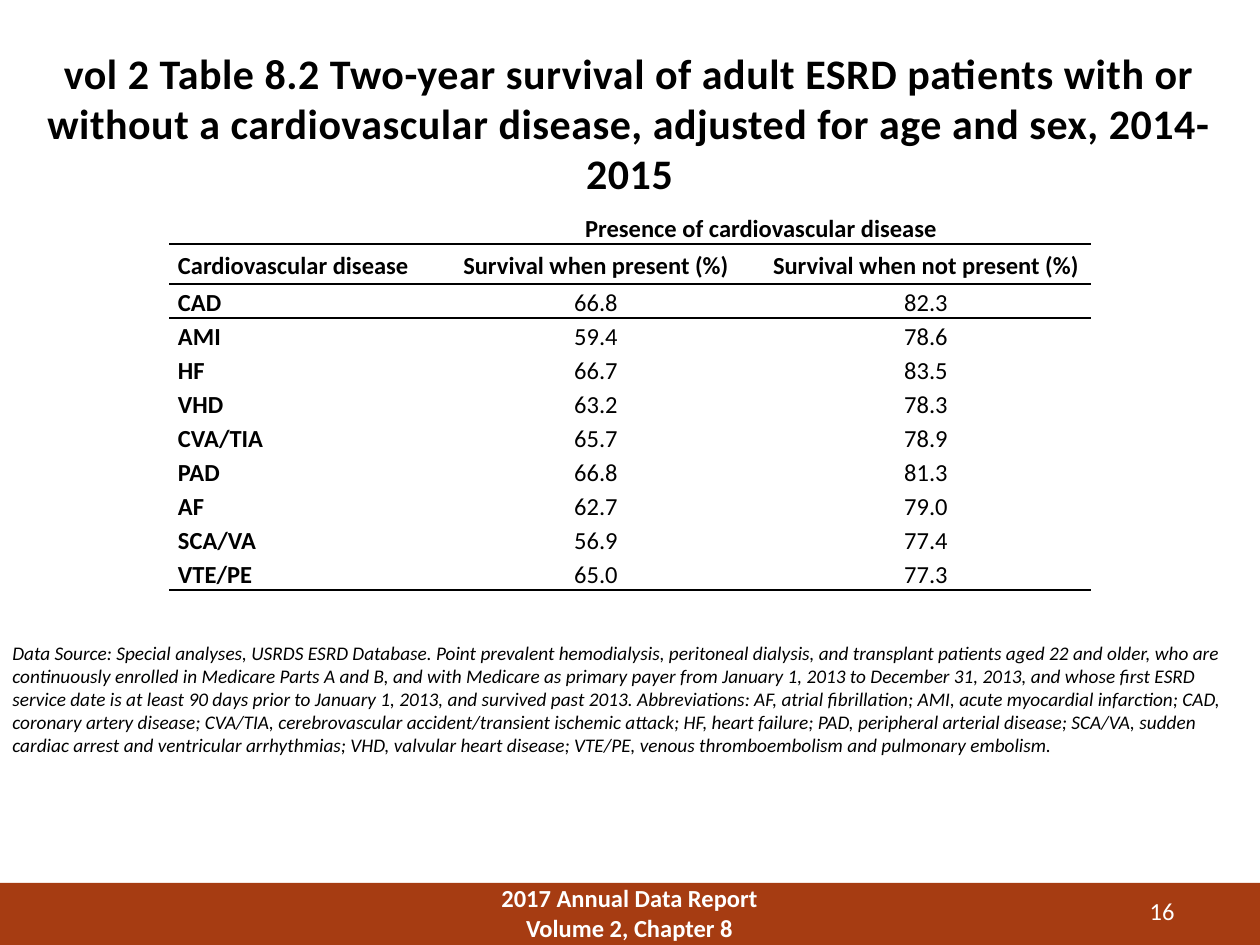
from lxml.etree import SubElement
from pptx import Presentation
from pptx.dml.color import RGBColor
from pptx.enum.shapes import MSO_SHAPE
from pptx.enum.text import MSO_ANCHOR, PP_ALIGN
from pptx.oxml.ns import qn
from pptx.util import Pt

PX = 914400 / 126
COLORS = {"text": "000000", "band": "A63C12", "footer": "FFFFFF"}
FONT = "Calibri"
NO_STYLE = "{2D5ABB26-0587-4C30-8999-92F81FD0307C}"
COLUMN_WIDTHS = [262, 330, 330]
HEADER_HEIGHTS = [34, 40]
ROW_HEIGHT = 34
HEADERS = ["Cardiovascular disease", "Survival when present (%)", "Survival when not present (%)"]
SURVIVAL = [
    ("CAD", "66.8", "82.3"),
    ("AMI", "59.4", "78.6"),
    ("HF", "66.7", "83.5"),
    ("VHD", "63.2", "78.3"),
    ("CVA/TIA", "65.7", "78.9"),
    ("PAD", "66.8", "81.3"),
    ("AF", "62.7", "79.0"),
    ("SCA/VA", "56.9", "77.4"),
    ("VTE/PE", "65.0", "77.3"),
]
TITLE = ("vol 2 Table 8.2 Two-year survival of adult ESRD patients with or without "
         "a cardiovascular disease, adjusted for age and sex, 2014-2015")
NOTE = (
    "Data Source: Special analyses, USRDS ESRD Database. Point prevalent hemodialysis, "
    "peritoneal dialysis, and transplant patients aged 22 and older, who are continuously "
    "enrolled in Medicare Parts A and B, and with Medicare as primary payer from January 1, "
    "2013 to December 31, 2013, and whose first ESRD service date is at least 90 days prior "
    "to January 1, 2013, and survived past 2013. Abbreviations: AF, atrial fibrillation; AMI, "
    "acute myocardial infarction; CAD, coronary artery disease; CVA/TIA, cerebrovascular "
    "accident/transient ischemic attack; HF, heart failure; PAD, peripheral arterial disease; "
    "SCA/VA, sudden cardiac arrest and ventricular arrhythmias; VHD, valvular heart disease; "
    "VTE/PE, venous thromboembolism and pulmonary embolism."
)


def px(value):
    return round(value * PX)


def rgb(name):
    return RGBColor.from_string(COLORS[name])


def set_attributes(target, **values):
    for name, value in values.items():
        setattr(target, name, value)


def write_paragraph(paragraph, text, size, color="text", align=PP_ALIGN.LEFT, **style):
    paragraph.alignment = align
    run = paragraph.add_run()
    run.text = text
    set_attributes(run.font, name=FONT, size=Pt(size), **style)
    run.font.color.rgb = rgb(color)
    return run


def add_text(slide, box, lines, size, anchor=MSO_ANCHOR.TOP, spacing=0, **style):
    frame = slide.shapes.add_textbox(*map(px, box)).text_frame
    set_attributes(frame, word_wrap=True, vertical_anchor=anchor)
    for index, line in enumerate(lines):
        paragraph = frame.add_paragraph() if index else frame.paragraphs[0]
        run = write_paragraph(paragraph, line, size, **style)
        if spacing:
            run.font._element.set("spc", str(spacing))


def add_band(slide, box):
    shape = slide.shapes.add_shape(MSO_SHAPE.RECTANGLE, *map(px, box))
    shape.shadow.inherit = False
    shape.fill.solid()
    shape.fill.fore_color.rgb = rgb("band")
    shape.line.fill.background()


def add_border(cell, side):
    line = SubElement(cell._tc.get_or_add_tcPr(), qn(f"a:{side}"), w=str(Pt(1)))
    fill = SubElement(line, qn("a:solidFill"))
    SubElement(fill, qn("a:srgbClr"), val=COLORS["text"])


def format_cell(cell, text, align, bold, borders):
    set_attributes(cell, margin_left=px(9), margin_right=px(9), margin_top=0,
                   margin_bottom=0, vertical_anchor=MSO_ANCHOR.MIDDLE)
    for side in borders:
        add_border(cell, side)
    cell.fill.background()
    paragraph = cell.text_frame.paragraphs[0]
    paragraph.line_spacing = 1.15
    if text:
        write_paragraph(paragraph, text, 14, align=align, bold=bold)
    else:
        SubElement(paragraph._p, qn("a:endParaRPr"), sz="1400")


def add_survival_table(slide, left, top):
    rows = [("", "Presence of cardiovascular disease", ""), HEADERS, *SURVIVAL]
    heights = HEADER_HEIGHTS + [ROW_HEIGHT] * len(SURVIVAL)
    box = (left, top, sum(COLUMN_WIDTHS), sum(heights))
    table = slide.shapes.add_table(len(rows), len(COLUMN_WIDTHS), *map(px, box)).table
    set_attributes(table, first_row=False, horz_banding=False)
    table._tbl.tblPr.find(qn("a:tableStyleId")).text = NO_STYLE
    for column, width in zip(table.columns, COLUMN_WIDTHS):
        column.width = px(width)
    for row, height in zip(table.rows, heights):
        row.height = px(height)
    borders = {0: ["lnB"], 1: ["lnT", "lnB"], 2: ["lnT"], len(rows) - 1: ["lnB"]}
    for r, values in enumerate(rows):
        for c, value in enumerate(values):
            align = PP_ALIGN.CENTER if c else PP_ALIGN.LEFT
            format_cell(table.cell(r, c), value, align, r < 2 or c == 0, borders.get(r, []))
    table.cell(0, 1).merge(table.cell(0, 2))


def main():
    presentation = Presentation()
    set_attributes(presentation, slide_width=px(1260), slide_height=px(945))
    slide = presentation.slides.add_slide(presentation.slide_layouts[6])
    add_band(slide, (0, 883, 1260, 62))
    add_text(slide, (451, 877, 357, 42), ["2017 Annual Data Report", "Volume 2, Chapter 8"], 14,
             color="footer", align=PP_ALIGN.CENTER, bold=True)
    add_text(slide, (1061, 892, 126, 38), ["16"], 14, MSO_ANCHOR.MIDDLE,
             color="footer", align=PP_ALIGN.RIGHT)
    add_text(slide, (-8, 41, 1275, 115), [TITLE], 24, spacing=30,
             align=PP_ALIGN.CENTER, bold=True)
    add_survival_table(slide, 169, 210)
    add_text(slide, (0, 635, 1260, 130), [NOTE], 11, italic=True)
    presentation.save("out.pptx")


if __name__ == "__main__":
    main()
